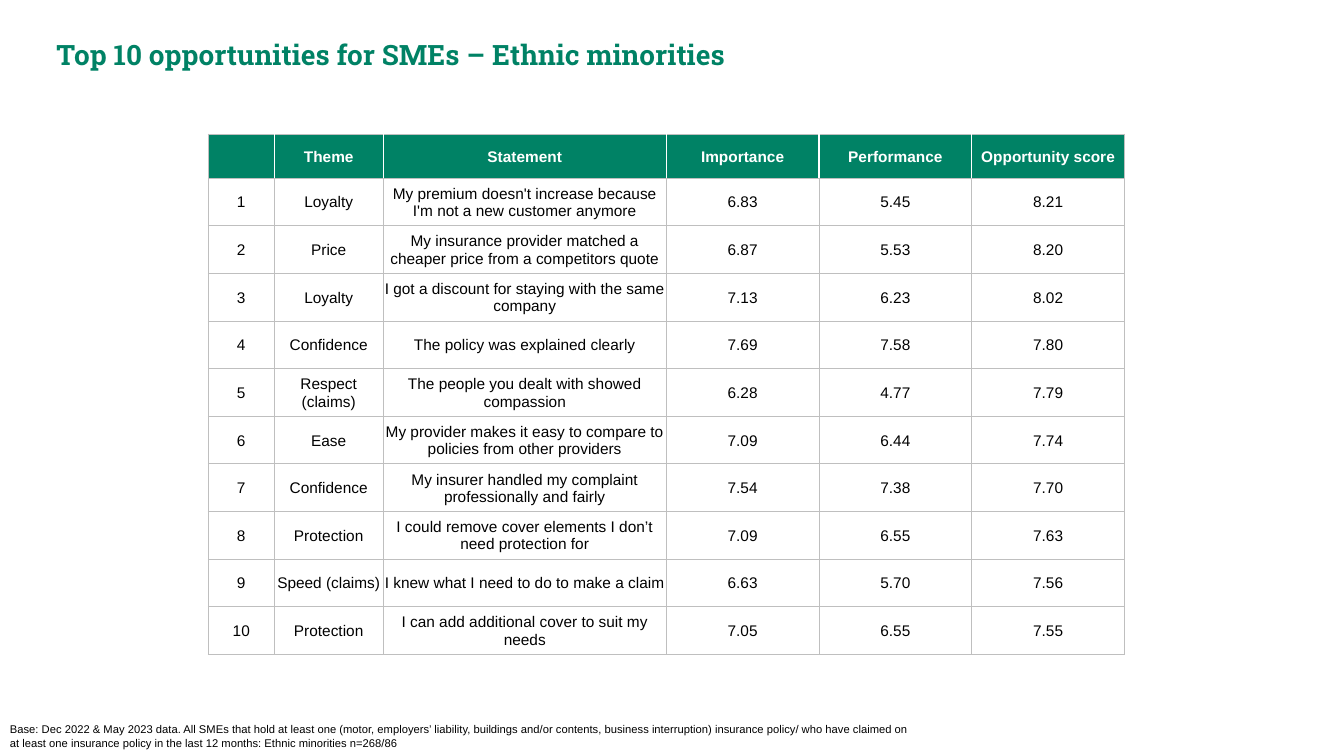
from lxml.etree import SubElement
from pptx import Presentation
from pptx.dml.color import RGBColor
from pptx.enum.text import MSO_ANCHOR as ANCHOR, PP_ALIGN as ALIGN
from pptx.oxml.ns import qn
from pptx.util import Cm, Pt

GREEN, GREY, WHITE, BLACK = "008265", "BFBFBF", "FFFFFF", "000000"

TITLE = "Top 10 opportunities for SMEs – Ethnic minorities"
BASE_NOTE = (
    "Base: Dec 2022 & May 2023 data. All SMEs that hold at least one (motor, employers’ liability, "
    "buildings and/or contents, business interruption) insurance policy/ who have claimed on "
    "at least one insurance policy in the last 12 months: Ethnic minorities n=268/86"
)
HEADER = ("", "Theme", "Statement", "Importance", "Performance", "Opportunity score")
OPPORTUNITIES = [
    ("Loyalty", "My premium doesn't increase because I'm not a new customer anymore", 6.83, 5.45, 8.21),
    ("Price", "My insurance provider matched a cheaper price from a competitors quote", 6.87, 5.53, 8.20),
    ("Loyalty", "I got a discount for staying with the same company", 7.13, 6.23, 8.02),
    ("Confidence", "The policy was explained clearly", 7.69, 7.58, 7.80),
    ("Respect (claims)", "The people you dealt with showed compassion", 6.28, 4.77, 7.79),
    ("Ease", "My provider makes it easy to compare to policies from other providers", 7.09, 6.44, 7.74),
    ("Confidence", "My insurer handled my complaint professionally and fairly", 7.54, 7.38, 7.70),
    ("Protection", "I could remove cover elements I don’t need protection for", 7.09, 6.55, 7.63),
    ("Speed (claims)", "I knew what I need to do to make a claim", 6.63, 5.70, 7.56),
    ("Protection", "I can add additional cover to suit my needs", 7.05, 6.55, 7.55),
]
COLUMN_WIDTHS = [1.66, 2.75, 7.13, 3.85, 3.85, 3.85]
ROW_HEIGHTS = [1.11] + [1.2] * len(OPPORTUNITIES)


def color(value):
    return RGBColor.from_string(value)


class SlideBuilder:
    """Holds the text style and the slide being filled."""

    def __init__(self, slide, font="Arial"):
        self.slide = slide
        self.font = font

    def add_text_run(self, p, text, fill=BLACK, **format_values):
        r = p.add_run()
        r.text = text
        for name, value in {"name": self.font, **format_values}.items():
            setattr(r.font, name, value)
        r.font.color.rgb = color(fill)

    def text(self, left, top, width, height, text, **style):
        sp = self.slide.shapes.add_textbox(Cm(left), Cm(top), Cm(width), Cm(height))
        sp.text_frame.word_wrap = True
        self.add_text_run(sp.text_frame.paragraphs[0], text, **style)

    def border(self, cell, side, line, points):
        """Draw one cell edge; side is L, R, T or B."""
        ln = SubElement(cell._tc.get_or_add_tcPr(), qn(f"a:ln{side}"), w=str(Pt(points)))
        SubElement(SubElement(ln, qn("a:solidFill")), qn("a:srgbClr"), val=line)

    def cell(self, cell, text, background, white_sides, **style):
        for side in "LRTB":
            self.border(cell, side, *((WHITE, 1) if side in white_sides else (GREY, 0.75)))
        cell.fill.solid()
        cell.fill.fore_color.rgb = color(background)
        layout = {"margin_left": Cm(0.03), "margin_right": Cm(0.03), "margin_top": Cm(0.03),
                  "margin_bottom": 0, "vertical_anchor": ANCHOR.MIDDLE}
        for name, value in layout.items():
            setattr(cell, name, value)
        p = cell.text_frame.paragraphs[0]
        p.alignment = ALIGN.CENTER
        self.add_text_run(p, text, size=Pt(11), **style)

    def table(self, left, top, widths, heights, rows):
        frame = self.slide.shapes.add_table(len(heights), len(widths), Cm(left), Cm(top),
                                            Cm(sum(widths)), Cm(sum(heights)))
        table = frame.table
        table.horz_banding = False
        for column, width in zip(table.columns, widths):
            column.width = Cm(width)
        for i, (row, height, values) in enumerate(zip(table.rows, heights, rows)):
            row.height = Cm(height)
            for j, (cell, text) in enumerate(zip(row.cells, values)):
                if i == 0:
                    inner_sides = ("L" if j > 0 else "") + ("R" if j < len(widths) - 1 else "")
                    self.cell(cell, text, GREEN, inner_sides, fill=WHITE, bold=True)
                else:
                    self.cell(cell, text, WHITE, "", bold=False)


def main():
    prs = Presentation()
    prs.slide_width, prs.slide_height = Cm(33.87), Cm(19.05)
    s = SlideBuilder(prs.slides.add_slide(prs.slide_layouts[6]))
    s.text(1.17, 0.81, 31.19, 1.11, TITLE, fill=GREEN, name="Roboto Slab", size=Pt(20), bold=True)
    rows = [HEADER]
    for rank, (theme, statement, *scores) in enumerate(OPPORTUNITIES, 1):
        rows.append((str(rank), theme, statement, *(f"{score:.2f}" for score in scores)))
    s.table(5.25, 3.38, COLUMN_WIDTHS, ROW_HEIGHTS, rows)
    s.text(0, 18.08, 23.44, 0.97, BASE_NOTE, size=Pt(8))
    prs.save("out.pptx")


if __name__ == "__main__":
    main()
